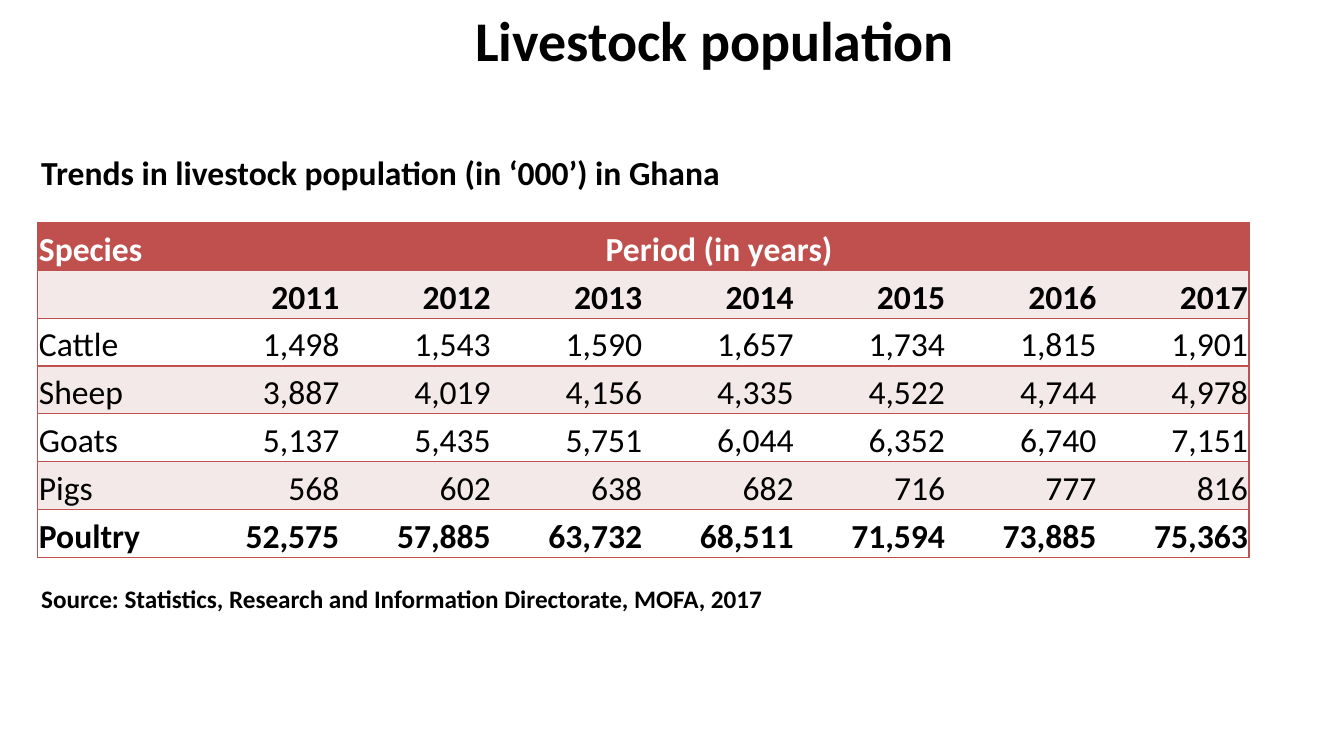
from lxml.etree import SubElement
from pptx import Presentation
from pptx.dml.color import RGBColor
from pptx.enum.text import MSO_ANCHOR, PP_ALIGN
from pptx.oxml.ns import qn
from pptx.util import Cm, Pt

BLACK = RGBColor(0x00, 0x00, 0x00)
WHITE = RGBColor(0xFF, 0xFF, 0xFF)
RED = RGBColor(0xC0, 0x50, 0x4D)
PINK = RGBColor(0xF4, 0xE9, 0xE9)

HEADER = ["Species", "Period (in years)"]
YEARS = [str(year) for year in range(2011, 2018)]
LIVESTOCK = {
    "Cattle": [1498, 1543, 1590, 1657, 1734, 1815, 1901],
    "Sheep": [3887, 4019, 4156, 4335, 4522, 4744, 4978],
    "Goats": [5137, 5435, 5751, 6044, 6352, 6740, 7151],
    "Pigs": [568, 602, 638, 682, 716, 777, 816],
    "Poultry": [52575, 57885, 63732, 68511, 71594, 73885, 75363],
}


class SlideBuilder:
    """Holds the text style and the slide being filled."""

    font_name = "Calibri"

    def __init__(self, page):
        self.page = page

    def set_text(self, frame, text, size, color=BLACK, bold=True, align=PP_ALIGN.LEFT):
        para = frame.paragraphs[0]
        para.text = text
        para.alignment = align
        font = para.font
        font.name, font.size, font.bold = self.font_name, Pt(size), bold
        font.color.rgb = color

    def title(self, text, left, top, width, height):
        box = self.page.shapes.title
        box.left, box.top, box.width, box.height = left, top, width, height
        box.text_frame.vertical_anchor = MSO_ANCHOR.TOP
        self.set_text(box.text_frame, text, 40, align=PP_ALIGN.CENTER)

    def caption(self, text, size, left, top, width, height):
        frame = self.page.shapes.add_textbox(left, top, width, height).text_frame
        frame.word_wrap = True
        frame.vertical_anchor = MSO_ANCHOR.MIDDLE
        self.set_text(frame, text, size)

    def borders(self, cell, visible_sides):
        properties = cell._tc.get_or_add_tcPr()
        for side in "LRTB":
            line = SubElement(properties, qn(f"a:ln{side}"), w=str(Pt(1)))
            if side in visible_sides:
                fill = SubElement(line, qn("a:solidFill"))
                SubElement(fill, qn("a:srgbClr"), val=str(RED))
            else:
                SubElement(line, qn("a:noFill"))

    def table(self, rows, bold_rows, left, top, width, height):
        row_count, column_count = len(rows), len(rows[1])
        table = self.page.shapes.add_table(
            row_count, column_count, left, top, width, height).table
        for row_index, values in enumerate(rows):
            is_header = row_index == 0
            band = RED if is_header else PINK if row_index % 2 else WHITE
            for column_index in range(column_count):
                cell = table.cell(row_index, column_index)
                is_first = column_index == 0
                is_last = column_index == column_count - 1
                # The merged header cell carries the right edge itself
                closes_row = is_last or (is_header and not is_first)
                self.borders(cell, "TB" + "L" * is_first + "R" * closes_row)
                cell.fill.solid()
                cell.fill.fore_color.rgb = band
                cell.margin_left = cell.margin_right = cell.margin_top = Cm(0.03)
                cell.margin_bottom = 0
                cell.vertical_anchor = MSO_ANCHOR.BOTTOM
                if column_index < len(values) and values[column_index]:
                    align = (PP_ALIGN.LEFT if is_first else
                             PP_ALIGN.CENTER if is_header else PP_ALIGN.RIGHT)
                    self.set_text(cell.text_frame, values[column_index], 24,
                                  WHITE if is_header else BLACK,
                                  row_index in bold_rows, align)
        table.cell(0, 1).merge(table.cell(0, column_count - 1))


def main():
    deck = Presentation()
    deck.slide_width, deck.slide_height = Cm(33.87), Cm(19.05)
    builder = SlideBuilder(deck.slides.add_slide(deck.slide_layouts[5]))

    # Title
    builder.title("Livestock population", Cm(2.77), 0, Cm(30.48), Cm(3.18))

    # Livestock table: header, years, then one row per species
    rows = [HEADER, [""] + YEARS]
    rows += [[species] + [f"{count:,}" for count in counts]
             for species, counts in LIVESTOCK.items()]
    bold_rows = {0, 1, len(rows) - 1}
    builder.table(rows, bold_rows, Cm(0.95), Cm(5.61), Cm(30.53), Cm(8.43))

    # Captions above and below the table
    builder.caption("Trends in livestock population (in ‘000’) in Ghana", 24,
                    Cm(0.79), Cm(3.18), Cm(30.91), Cm(2.31))
    builder.caption("Source: Statistics, Research and Information Directorate, MOFA, 2017",
                    18, Cm(0.79), Cm(14.05), Cm(30.91), Cm(2.06))

    deck.save("out.pptx")


if __name__ == "__main__":
    main()
